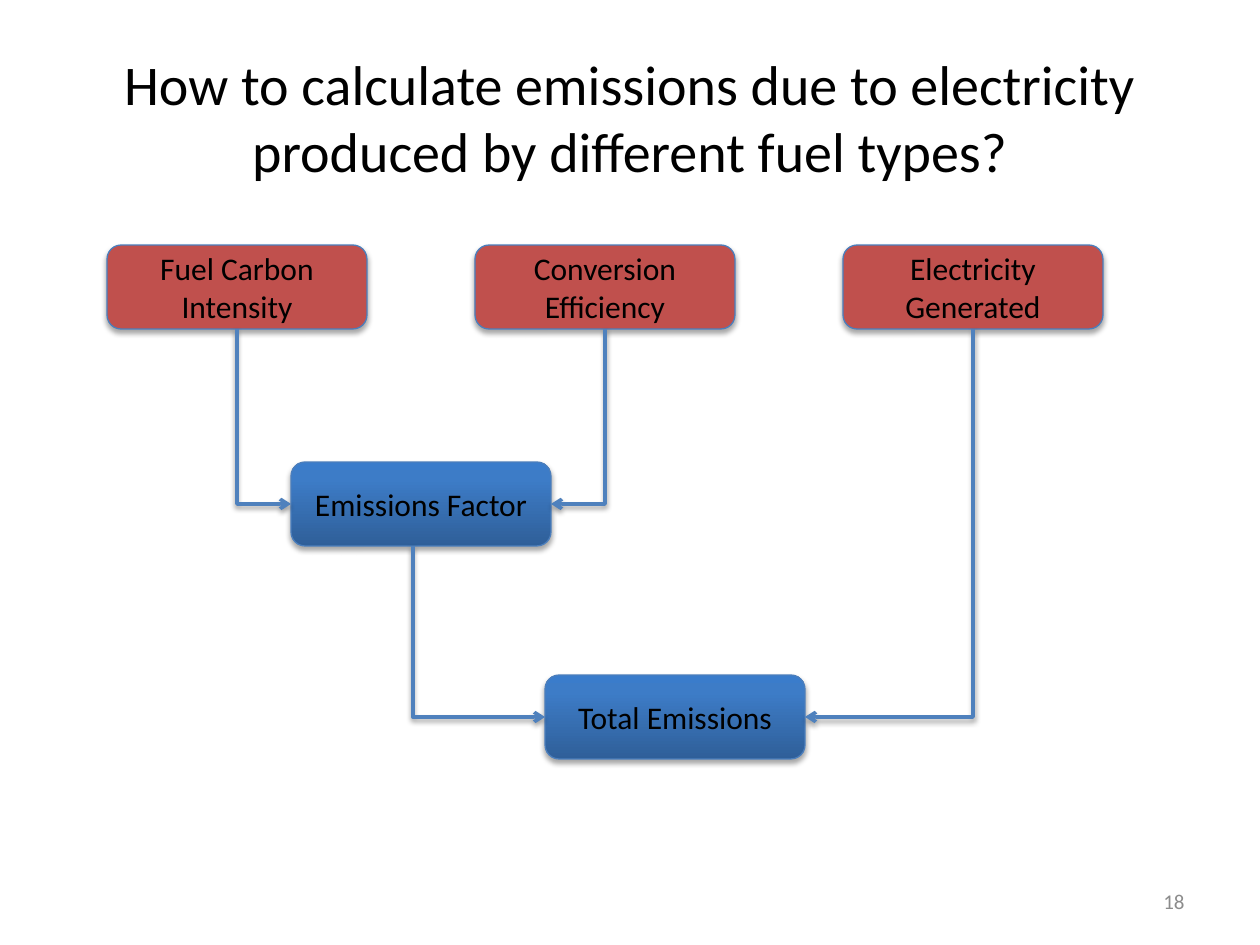
from lxml.etree import SubElement
from pptx import Presentation
from pptx.dml.color import RGBColor
from pptx.enum.shapes import MSO_CONNECTOR, MSO_SHAPE
from pptx.enum.text import MSO_ANCHOR, PP_ALIGN
from pptx.oxml import parse_xml
from pptx.oxml.ns import nsdecls, qn
from pptx.util import Emu, Pt

SCALE = 914400 / 126
COLORS = {
    "text": "000000",
    "number": "8C8C8C",
    "input": "C0504D",
    "outline": "4B7EBC",
    "arrow": "4F81BD",
    "shadow": "000000",
}
RESULT_STOPS = [(0, "2F5F99"), (80, "3D7CC7"), (100, "3A7CCB")]
BOX_WIDTH, BOX_HEIGHT = 260, 84
INPUT_LEFT, INPUT_TOP, INPUT_STEP = 107, 245, 368
INPUTS = ["Fuel Carbon Intensity", "Conversion Efficiency", "Electricity Generated"]


def px(value):
    """Turn pixels into EMU."""
    return Emu(round(value * SCALE))


def color(name):
    """Look up a named colour."""
    return RGBColor.from_string(COLORS[name])


def write(shape, text, size, align=PP_ALIGN.CENTER, ink="text"):
    """Put one formatted paragraph in a shape."""
    frame = shape.text_frame
    frame.word_wrap = True
    frame.vertical_anchor = MSO_ANCHOR.MIDDLE
    para = frame.paragraphs[0]
    para.alignment = align
    span = para.add_run()
    span.text = text
    for name, value in {"name": "Calibri", "size": Pt(size)}.items():
        setattr(span.font, name, value)
    span.font.color.rgb = color(ink)


def add_text(page, area, text, size, **style):
    """Add a text box."""
    write(page.shapes.add_textbox(*map(px, area)), text, size, **style)


def add_shadow(shape, alpha, distance):
    """Give a shape or connector a soft shadow below."""
    shape._element.spPr.append(parse_xml(
        f'<a:effectLst {nsdecls("a")}><a:outerShdw blurRad="{Pt(3.1)}" '
        f'dist="{Pt(distance)}" dir="5400000" rotWithShape="0">'
        f'<a:srgbClr val="{COLORS["shadow"]}"><a:alpha val="{alpha * 1000}"/>'
        '</a:srgbClr></a:outerShdw></a:effectLst>'))


def fill_gradient(box):
    """Fill a box with the vertical result gradient."""
    stops = "".join(
        f'<a:gs pos="{place * 1000}"><a:srgbClr val="{value}"/></a:gs>'
        for place, value in RESULT_STOPS)
    box._element.spPr.insert(2, parse_xml(
        f'<a:gradFill {nsdecls("a")} rotWithShape="1"><a:gsLst>{stops}</a:gsLst>'
        '<a:lin ang="16200000" scaled="0"/></a:gradFill>'))


def add_box(page, left, top, text, is_result=False):
    """Add a rounded box for an input or a result."""
    box = page.shapes.add_shape(
        MSO_SHAPE.ROUNDED_RECTANGLE, *map(px, (left, top, BOX_WIDTH, BOX_HEIGHT)))
    if is_result:
        fill_gradient(box)
    else:
        box.fill.solid()
        box.fill.fore_color.rgb = color("input")
    box.line.color.rgb = color("outline")
    box.line.width = Pt(0.75)
    add_shadow(box, 35, 1.8)
    write(box, text, 18)
    return box


def add_bent_arrow(page, source, target, shift=0):
    """Lead an arrow down from a box and sideways into another."""
    start_x = source.left + source.width // 2 + px(shift)
    start_y = source.top + source.height
    rightward = start_x < target.left
    end_x = target.left if rightward else target.left + target.width
    end_y = target.top + target.height // 2
    arrow = page.shapes.add_connector(MSO_CONNECTOR.ELBOW, start_x, start_y, end_x, end_y)
    if not shift:
        arrow.begin_connect(source, 2)
    arrow.end_connect(target, 1 if rightward else 3)
    width, height = end_y - start_y, abs(end_x - start_x)
    geometry = {
        "left": Emu((start_x + end_x - width) // 2),
        "top": Emu((start_y + end_y - height) // 2),
        "width": Emu(width),
        "height": Emu(height),
    }
    for name, value in geometry.items():
        setattr(arrow, name, value)
    properties = arrow._element.spPr
    frame = properties.find(qn("a:xfrm"))
    frame.set("rot", "16200000" if rightward else "5400000")
    frame.set("flipH", "1" if rightward else "0")
    properties.find(qn("a:prstGeom")).set("prst", "bentConnector2")
    arrow.line.color.rgb = color("arrow")
    arrow.line.width = Pt(2)
    SubElement(properties.find(qn("a:ln")), qn("a:tailEnd"), type="arrow")
    add_shadow(arrow, 38, 1.6)


def main():
    """Build the emissions calculation slide."""
    deck = Presentation()
    deck.slide_width, deck.slide_height = px(1260), px(945)
    page = deck.slides.add_slide(deck.slide_layouts[6])
    add_text(page, (63, 38, 1134, 157),
             "How to calculate emissions due to electricity produced by different fuel types?", 32)
    add_text(page, (903, 876, 294, 50), "18", 12, align=PP_ALIGN.RIGHT, ink="number")
    total = add_box(page, 545, 675, "Total Emissions", is_result=True)
    factor = add_box(page, 291, 462, "Emissions Factor", is_result=True)
    carbon, efficiency, generated = [
        add_box(page, INPUT_LEFT + index * INPUT_STEP, INPUT_TOP, text)
        for index, text in enumerate(INPUTS)]
    add_bent_arrow(page, carbon, factor)
    add_bent_arrow(page, factor, total, shift=-8)
    add_bent_arrow(page, generated, total)
    add_bent_arrow(page, efficiency, factor)
    deck.save("out.pptx")


if __name__ == "__main__":
    main()
